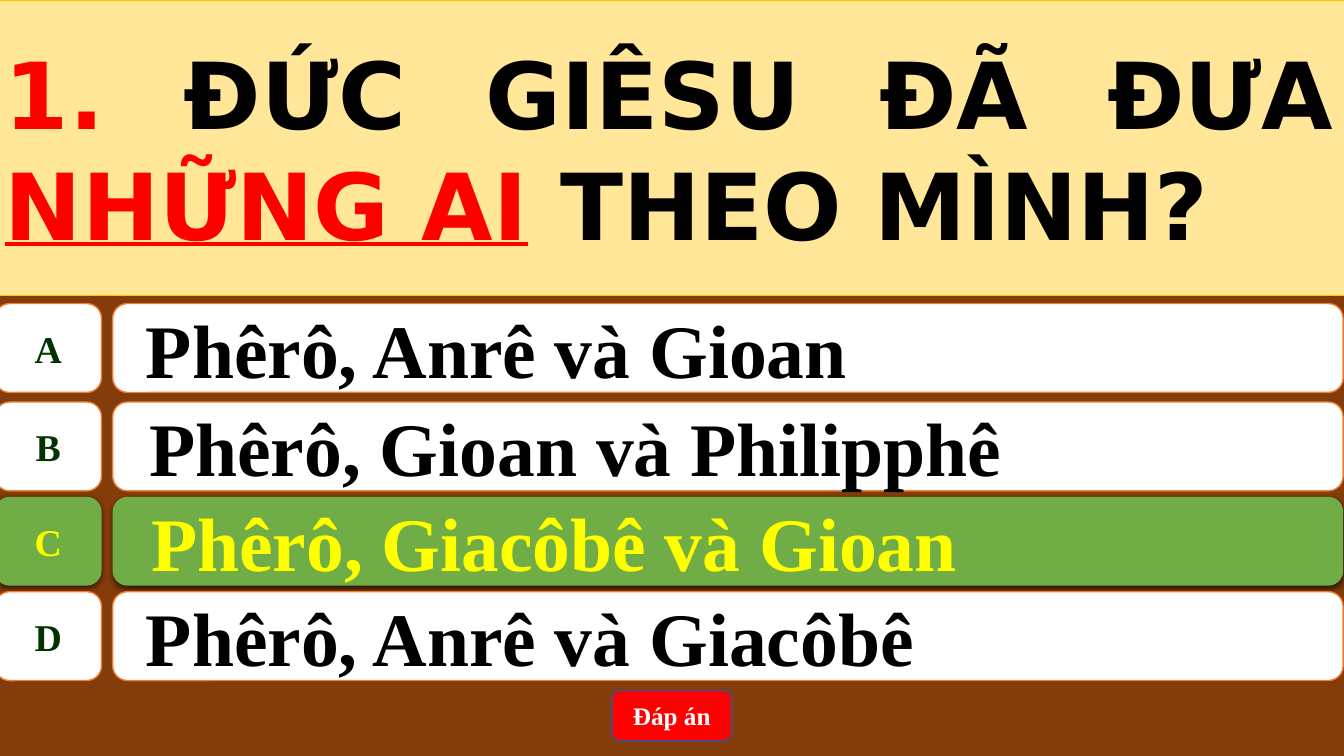
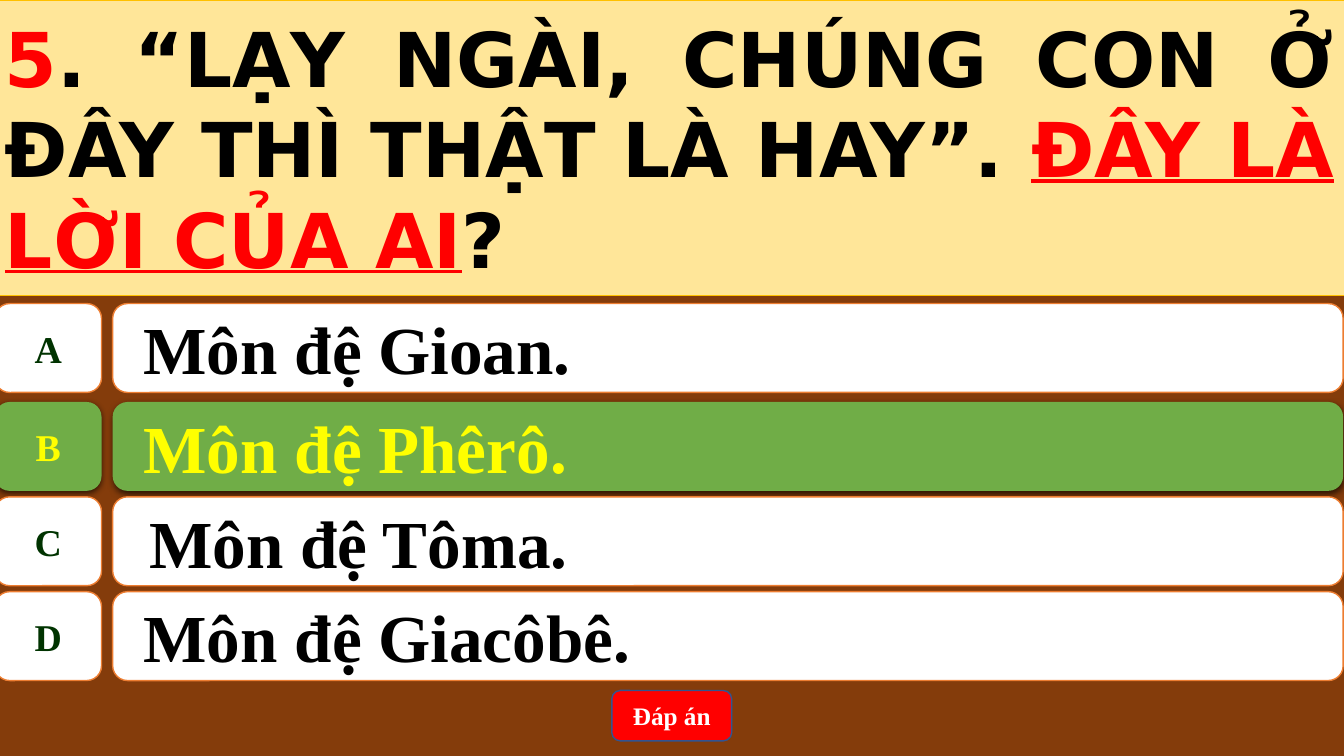
from dataclasses import dataclass
from typing import Optional

from lxml.etree import SubElement
from pptx import Presentation
from pptx.dml.color import RGBColor
from pptx.enum.shapes import MSO_SHAPE
from pptx.enum.text import MSO_ANCHOR, MSO_AUTO_SIZE, PP_ALIGN
from pptx.oxml.ns import qn
from pptx.util import Cm, Pt

BROWN, CREAM, GOLD = "843C0B", "FFE699", "FFC000"
WHITE, BLACK, RED, YELLOW = "FFFFFF", "000000", "FF0000", "FFFF00"
ORANGE, GREEN, DARK_GREEN, BLUE = "ED7D31", "70AD47", "003300", "325491"
SERIF, SANS = "Times New Roman", "DejaVu Sans"

SLIDE_W, SLIDE_H = 33.87, 19.05
LEFT = -0.13
QUESTION_W, QUESTION_H = 34.01, 7.44
LETTER_W, ROW_H = 2.69, 2.24
ANSWER_LEFT, ANSWER_W = 2.84, 31.01
ROW_TOPS = (7.65, 10.13, 12.52, 14.91)
TITLE_ONLY = 5


@dataclass(frozen=True)
class Part:
    text: str
    color: str = BLACK
    underline: bool = False


@dataclass(frozen=True)
class Answer:
    text: str
    indent: float
    correct: bool = False


@dataclass(frozen=True)
class Quiz:
    question: tuple[Part, ...]
    question_size: int
    answers: tuple[Answer, ...]
    answer_size: int


QUIZZES = (
    Quiz(
        (Part("1. ", RED), Part("ĐỨC GIÊSU ĐÃ ĐƯA "),
         Part("NHỮNG AI", RED, True), Part(" THEO MÌNH?")),
        66,
        (Answer("Phêrô, Anrê và Gioan", 0.48),
         Answer("Phêrô, Gioan và Philipphê", 0.56),
         Answer("Phêrô, Giacôbê và Gioan", 0.61, True),
         Answer("Phêrô, Anrê và Giacôbê", 0.48)),
        54,
    ),
    Quiz(
        (Part("5", RED), Part(". “LẠY NGÀI, CHÚNG CON Ở ĐÂY THÌ THẬT LÀ HAY”. "),
         Part("ĐÂY LÀ LỜI CỦA AI", RED, True), Part("?")),
        54,
        (Answer("Môn đệ Gioan.", 0.42),
         Answer("Môn đệ Phêrô.", 0.42, True),
         Answer("Môn đệ Tôma.", 0.56),
         Answer("Môn đệ Giacôbê.", 0.42)),
        48,
    ),
)


def rgb(color: str) -> RGBColor:
    return RGBColor.from_string(color)


def paint(sp, fill: str, line: Optional[str], width: float = 1) -> None:
    sp.fill.solid()
    sp.fill.fore_color.rgb = rgb(fill)
    if line:
        sp.line.color.rgb = rgb(line)
        sp.line.width = Pt(width)
    else:
        sp.line.fill.background()


def style_run(r, font: str, size: float, color: str) -> None:
    r.font.name, r.font.size, r.font.bold = font, Pt(size), True
    r.font.color.rgb = rgb(color)


def add_drop_shadow(sp) -> None:
    effects = sp._element.spPr.find(qn("a:effectLst"))
    shadow = SubElement(effects, qn("a:outerShdw"), blurRad=str(Pt(4.5)),
                        dist=str(Pt(1.5)), dir="5400000", algn="ctr", rotWithShape="0")
    color = SubElement(shadow, qn("a:srgbClr"), val=BLACK)
    SubElement(color, qn("a:alpha"), val="63000")


def add_box(slide, kind, left: float, top: float, width: float, height: float,
            text: str, size: float, color: str, fill: str, line: Optional[str],
            align=PP_ALIGN.CENTER):
    sp = slide.shapes.add_shape(kind, Cm(left), Cm(top), Cm(width), Cm(height))
    sp.shadow.inherit = False
    paint(sp, fill, line)
    tf = sp.text_frame
    tf.text = text
    tf.vertical_anchor = MSO_ANCHOR.MIDDLE
    p = tf.paragraphs[0]
    p.alignment = align
    style_run(p.runs[0], SERIF, size, color)
    return sp


def add_question(slide, parts: tuple[Part, ...], size: int) -> None:
    sp = slide.shapes.title
    sp.left, sp.top = Cm(LEFT), Cm(0)
    sp.width, sp.height = Cm(QUESTION_W), Cm(QUESTION_H)
    paint(sp, CREAM, GOLD, 0.5)
    tf = sp.text_frame
    tf.word_wrap = True
    tf.auto_size = MSO_AUTO_SIZE.NONE
    tf.vertical_anchor = MSO_ANCHOR.MIDDLE
    p = tf.paragraphs[0]
    p.alignment = PP_ALIGN.JUSTIFY
    for part in parts:
        r = p.add_run()
        r.text = part.text
        style_run(r, SANS, size, part.color)
        r.font.underline = part.underline


def add_answer(slide, letter: str, top: float, answer: Answer, size: int) -> None:
    """Draw the letter and its answer, green with a shadow when correct."""
    fill, line = (GREEN, None) if answer.correct else (WHITE, ORANGE)
    letter_color, text_color = (YELLOW, YELLOW) if answer.correct else (DARK_GREEN, BLACK)
    bar = add_box(slide, MSO_SHAPE.ROUNDED_RECTANGLE, ANSWER_LEFT, top, ANSWER_W, ROW_H,
                  answer.text, size, text_color, fill, line, PP_ALIGN.LEFT)
    bar.text_frame.paragraphs[0]._p.get_or_add_pPr().set("marL", str(Cm(answer.indent)))
    tag = add_box(slide, MSO_SHAPE.FLOWCHART_ALTERNATE_PROCESS, LEFT, top, LETTER_W, ROW_H,
                  letter, 27, letter_color, fill, line)
    tag.text_frame.word_wrap = False
    if answer.correct:
        add_drop_shadow(bar)
        add_drop_shadow(tag)


def add_quiz(prs, quiz: Quiz) -> None:
    slide = prs.slides.add_slide(prs.slide_layouts[TITLE_ONLY])
    add_question(slide, quiz.question, quiz.question_size)
    for letter, top, answer in zip("ABCD", ROW_TOPS, quiz.answers):
        add_answer(slide, letter, top, answer, quiz.answer_size)
    add_box(slide, MSO_SHAPE.ROUNDED_RECTANGLE, 15.42, 17.4, 3.02, 1.27,
            "Đáp án", 18, WHITE, RED, BLUE)


def main() -> None:
    prs = Presentation()
    prs.slide_width, prs.slide_height = Cm(SLIDE_W), Cm(SLIDE_H)
    background = prs.slide_master.background.fill
    background.solid()
    background.fore_color.rgb = rgb(BROWN)
    for quiz in QUIZZES:
        add_quiz(prs, quiz)
    prs.save("out.pptx")


if __name__ == "__main__":
    main()
